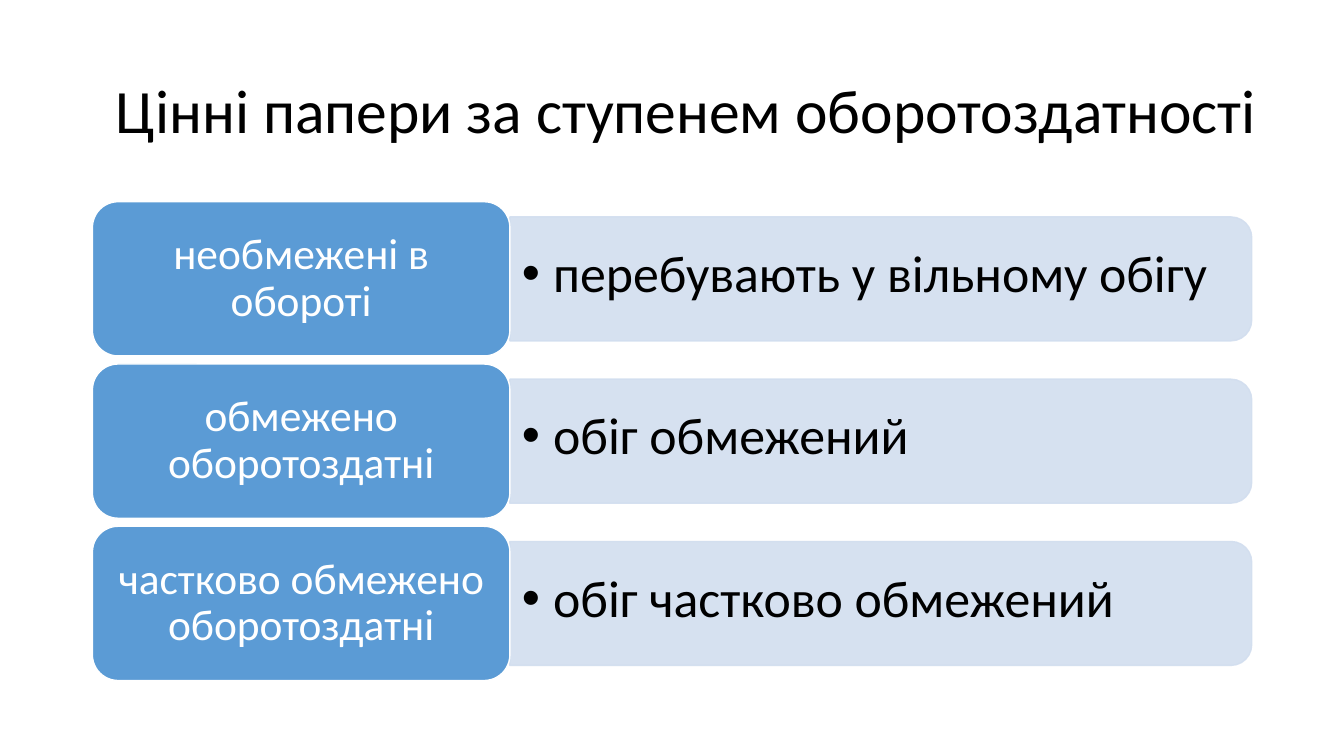
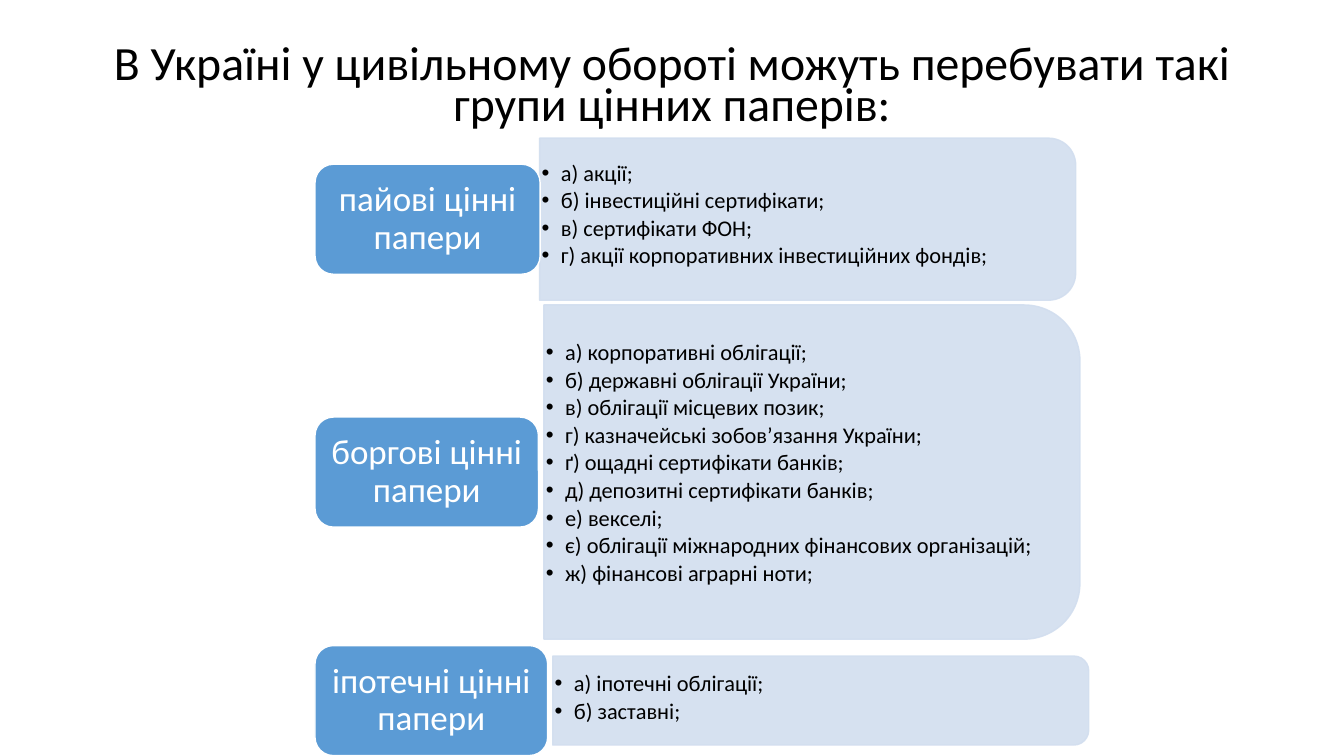
from lxml import etree
from pptx import Presentation
from pptx.dml.color import RGBColor
from pptx.enum.shapes import MSO_SHAPE
from pptx.enum.text import MSO_ANCHOR, MSO_AUTO_SIZE, PP_ALIGN
from pptx.oxml.ns import qn
from pptx.util import Inches, Pt

LABEL_SHAPE = MSO_SHAPE.ROUNDED_RECTANGLE
PANEL_SHAPE = MSO_SHAPE.ROUND_2_SAME_RECTANGLE
MIDDLE = MSO_ANCHOR.MIDDLE
CENTER = PP_ALIGN.CENTER
NO_AUTOFIT = MSO_AUTO_SIZE.NONE

COLORS = {"text": "000000", "label": "5B9BD5", "panel": "D2DEEF", "white": "FFFFFF"}
FONT = "Calibri"
COLUMNS, ROWS = 160, 90
TITLE_ONLY = 5


class Deck:
    def __init__(self):
        self.presentation = Presentation()
        self.presentation.slide_width = Inches(13.33)
        self.presentation.slide_height = Inches(7.5)
        self.slide = None

    def box(self, left, top, width, height):
        column = self.presentation.slide_width / COLUMNS
        row = self.presentation.slide_height / ROWS
        return (round(left * column), round(top * row),
                round(width * column), round(height * row))

    def color(self, name):
        return RGBColor.from_string(COLORS[name])

    def frame(self, shape, left=0.1, top=0.05, right=0.1, bottom=0.05):
        frame = shape.text_frame
        frame.word_wrap = True
        frame.auto_size = NO_AUTOFIT
        frame.vertical_anchor = MIDDLE
        frame.margin_left, frame.margin_right = Inches(left), Inches(right)
        frame.margin_top, frame.margin_bottom = Inches(top), Inches(bottom)
        return frame

    def style(self, paragraph, size, color, line_spacing=0.9, space_after=0):
        paragraph.line_spacing = line_spacing
        paragraph.space_before = Pt(0)
        paragraph.space_after = Pt(space_after)
        for run in paragraph.runs:
            run.font.name = FONT
            run.font.size = Pt(size)
            run.font.color.rgb = self.color(color)

    def title(self, text, box, size, line_spacing=0.9):
        layout = self.presentation.slide_layouts[TITLE_ONLY]
        self.slide = self.presentation.slides.add_slide(layout)
        title = self.slide.shapes.title
        title.left, title.top, title.width, title.height = self.box(*box)
        frame = self.frame(title)
        frame.text = text
        frame.paragraphs[0].alignment = CENTER
        self.style(frame.paragraphs[0], size, "text", line_spacing)

    def shape(self, kind, box, fill, line):
        shape = self.slide.shapes.add_shape(kind, *box)
        shape.shadow.inherit = False
        shape.fill.solid()
        shape.fill.fore_color.rgb = self.color(fill)
        shape.line.color.rgb = self.color(line)
        shape.line.width = Pt(1)
        return shape

    def label(self, text, left, middle, width, height, size):
        box = self.box(left, middle - height / 2, width, height)
        label = self.shape(LABEL_SHAPE, box, "label", "white")
        frame = self.frame(label)
        frame.text = text
        frame.paragraphs[0].alignment = CENTER
        self.style(frame.paragraphs[0], size, "white", space_after=size * 0.35)

    def panel(self, left, middle, width, height):
        turned_box = self.box(left + (width - height) / 2, middle - width / 2, height, width)
        panel = self.shape(PANEL_SHAPE, turned_box, "panel", "panel")
        panel.rotation = 90
        for color in panel.element.spPr.iter(qn("a:srgbClr")):
            etree.SubElement(color, qn("a:alpha"), val="90000")

    def bullets(self, items, left, middle, width, height, size, inset, indent, space_after):
        box = self.box(left, middle - height / 2, width, height)
        text_box = self.slide.shapes.add_textbox(*box)
        bottom = height * 0.05 * 7.5 / ROWS
        frame = self.frame(text_box, inset, 0, 0, bottom)
        frame.text = "\n".join(items)
        for paragraph in frame.paragraphs:
            self.style(paragraph, size, "text", space_after=space_after)
            properties = paragraph._p.get_or_add_pPr()
            properties.set("marL", str(Inches(indent)))
            properties.set("indent", str(-Inches(indent)))
            bullet_color = etree.SubElement(properties, qn("a:buClr"))
            etree.SubElement(bullet_color, qn("a:srgbClr"), val=COLORS["text"])
            etree.SubElement(properties, qn("a:buFont"), typeface="Arial")
            etree.SubElement(properties, qn("a:buChar"), char="•")

    def group(self, label, items, label_box, panel_box, label_size, bullet_style):
        self.panel(*panel_box)
        self.bullets(items, *panel_box, **bullet_style)
        self.label(label, *label_box, label_size)


def turnover_slide(deck):
    deck.title("Цінні папери за ступенем оборотоздатності", (10, 4.8, 143.5, 17.4), 44)
    bullet_style = {"size": 37, "inset": 0.12, "indent": 0.31, "space_after": 5.6}
    groups = [
        ("необмежені в обороті", "перебувають у вільному обігу"),
        ("обмежено оборотоздатні", "обіг обмежений"),
        ("частково обмежено оборотоздатні", "обіг частково обмежений"),
    ]
    for index, (label, item) in enumerate(groups):
        middle = 33.2 + 19.32 * index
        deck.group(label, [item], (11, middle, 49.7, 18.36),
                   (60.7, middle, 88.3, 14.76), 31, bullet_style)


def kinds_slide(deck):
    deck.title("В Україні у цивільному обороті можуть перебувати такі групи цінних паперів:",
               (11, 4.8, 138, 11.6), 34.1, 0.7)
    bullet_style = {"size": 16, "inset": 0.02, "indent": 0.19, "space_after": 2.4}
    groups = [
        ("пайові цінні папери", 26.1, 26.8, 64.25, 19.3, [
            "а) акції;",
            "б) інвестиційні сертифікати;",
            "в) сертифікати ФОН;",
            "г) акції корпоративних інвестиційних фондів;",
        ]),
        ("боргові цінні папери", 56.2, 26.6, 64.75, 39.8, [
            "а) корпоративні облігації;",
            "б) державні облігації України;",
            "в) облігації місцевих позик;",
            "г) казначейські зобов’язання України;",
            "ґ) ощадні сертифікати банків;",
            "д) депозитні сертифікати банків;",
            "е) векселі;",
            "є) облігації міжнародних фінансових організацій;",
            "ж) фінансові аграрні ноти;",
        ]),
        ("іпотечні цінні папери", 83.4, 27.7, 65.8, 10.6, [
            "а) іпотечні облігації;",
            "б) заставні;",
        ]),
    ]
    for label, middle, label_width, panel_left, panel_height, items in groups:
        deck.group(label, items, (37.5, middle, label_width, 13.1),
                   (panel_left, middle, 63.8, panel_height), 25, bullet_style)


def main():
    deck = Deck()
    turnover_slide(deck)
    kinds_slide(deck)
    deck.presentation.save("out.pptx")


if __name__ == "__main__":
    main()
